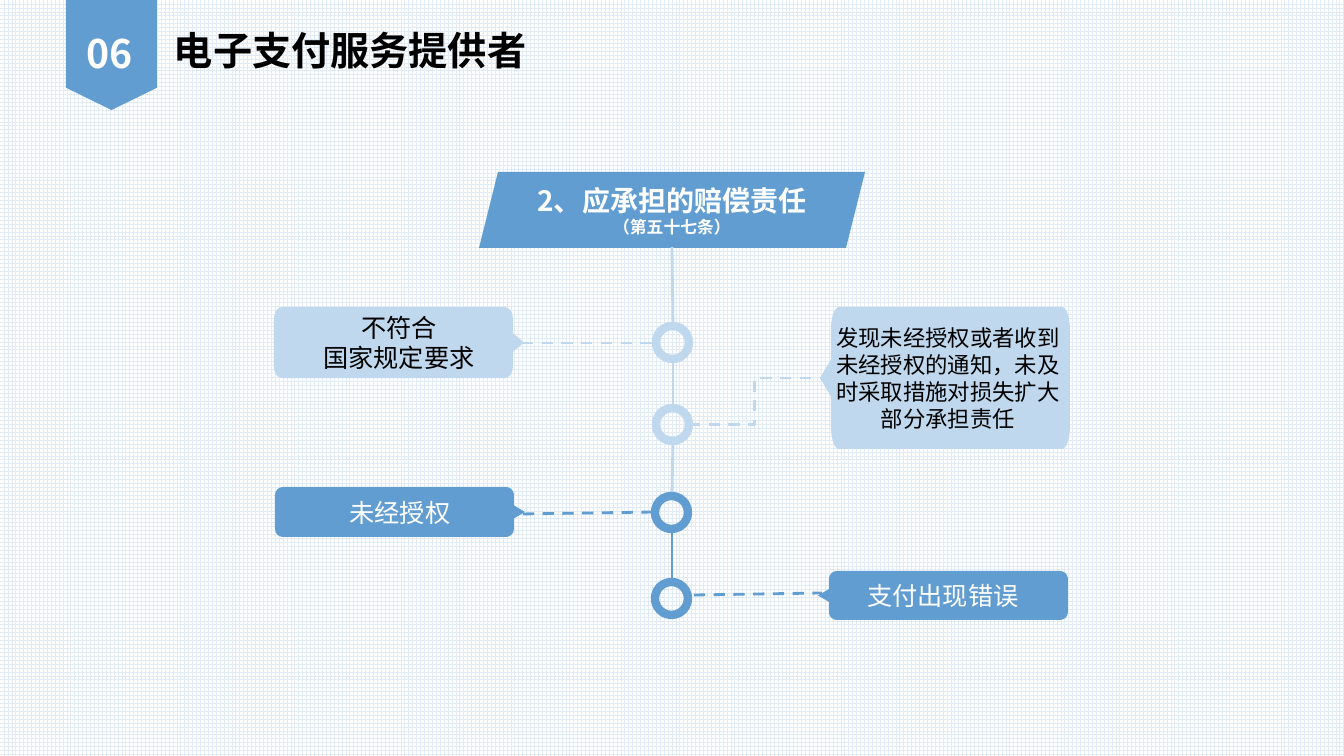
from lxml import etree
from pptx import Presentation
from pptx.dml.color import RGBColor
from pptx.enum.dml import MSO_LINE, MSO_PATTERN
from pptx.enum.shapes import MSO_CONNECTOR, MSO_SHAPE
from pptx.enum.text import MSO_ANCHOR, MSO_AUTO_SIZE, PP_ALIGN
from pptx.oxml.ns import qn
from pptx.util import Pt

EMU_PER_PX = 914400 / 100.8
BLUE = RGBColor(0x62, 0x9D, 0xD1)
PALE = RGBColor(0xC0, 0xD8, 0xED)
GRID = RGBColor(0xE0, 0xEB, 0xF6)
WHITE = RGBColor(0xFF, 0xFF, 0xFF)
BLACK = RGBColor(0x00, 0x00, 0x00)
HEAD_FONT, BODY_FONT = "Noto Sans CJK SC", "Lato"

PENTAGON, PARALLELOGRAM = MSO_SHAPE.PENTAGON, MSO_SHAPE.PARALLELOGRAM
OVAL = MSO_SHAPE.OVAL
STRAIGHT, ELBOW = MSO_CONNECTOR.STRAIGHT, MSO_CONNECTOR.ELBOW
DASH = MSO_LINE.DASH
CENTER, LEFT, MIDDLE = PP_ALIGN.CENTER, PP_ALIGN.LEFT, MSO_ANCHOR.MIDDLE

RING_SIZE = 33
ARC_PULL = 0.55


def px(value):
    return round(value * EMU_PER_PX)


def write(frame, lines, font, color, bold=False, align=CENTER):
    """Fill a text frame with one paragraph per (text, size) pair."""
    frame.word_wrap = True
    for index, (text, size) in enumerate(lines):
        para = frame.add_paragraph() if index else frame.paragraphs[0]
        para.alignment = align
        span = para.add_run()
        span.text = text
        span.font.name, span.font.size = font, Pt(size)
        span.font.bold, span.font.color.rgb = bold, color
        east_asian = etree.SubElement(span.font._element, qn("a:ea"))
        east_asian.set("typeface", HEAD_FONT)


def paint(shape, color):
    shape.shadow.inherit = False
    shape.fill.solid()
    shape.fill.fore_color.rgb = color
    shape.line.fill.background()


def add_block(page, kind, left, top, width, height):
    block = page.shapes.add_shape(kind, px(left), px(top), px(width), px(height))
    paint(block, BLUE)
    return block


def add_heading(page, left, top, width, height, text, color):
    box = page.shapes.add_textbox(px(left), px(top), px(width), px(height))
    write(box.text_frame, [(text, 28)], HEAD_FONT, color, True, LEFT)
    box.text_frame.auto_size = MSO_AUTO_SIZE.SHAPE_TO_FIT_TEXT


def add_ring(page, left, top, color):
    ring = page.shapes.add_shape(OVAL, px(left), px(top), px(RING_SIZE), px(RING_SIZE))
    ring.shadow.inherit = False
    ring.fill.background()
    ring.line.color.rgb = color
    ring.line.width = Pt(6)


def add_line(page, start, end, color, kind=STRAIGHT, dash=None):
    line = page.shapes.add_connector(kind, *map(px, start + end))
    line.line.color.rgb = color
    line.line.width = Pt(2)
    if dash:
        line.line.dash_style = dash
    etree.SubElement(line._element.spPr, qn("a:effectLst"))


def round_corner(segment, start, horizontal_first):
    """Turn a straight corner cut into a curve."""
    end = (int(segment[0].get("x")), int(segment[0].get("y")))
    corner = (end[0], start[1]) if horizontal_first else (start[0], end[1])
    segment_points = [[round(a + ARC_PULL * (c - a)) for a, c in zip(anchor, corner)]
                      for anchor in (start, end)]
    curve = etree.Element(qn("a:cubicBezTo"))
    for x, y in segment_points + [end]:
        etree.SubElement(curve, qn("a:pt"), x=str(x), y=str(y))
    segment.getparent().replace(segment, curve)


def add_callout(page, left, top, width, height, color, points_left, lines, text_color):
    """Rounded box with a small pointer halfway up one side."""
    pointer, radius_x, radius_y = 11, 8, height * 0.16
    body, middle, half = width - pointer, height / 2, height * 0.13
    outline = [(radius_x, 0), (body - radius_x, 0), (body, radius_y),
               (body, middle - half), (width, middle), (body, middle + half),
               (body, height - radius_y), (body - radius_x, height),
               (radius_x, height), (0, height - radius_y), (0, radius_y)]
    if points_left:
        outline = [(width - x, y) for x, y in outline]
    points = [(px(left + x), px(top + y)) for x, y in outline]
    builder = page.shapes.build_freeform(*points[0])
    builder.add_line_segments(points[1:] + points[:1], close=True)
    callout = builder.convert_to_shape()

    segments = list(callout._element.iter(qn("a:lnTo")))
    for index, horizontal_first in ((1, True), (6, False), (8, True), (10, False)):
        before = segments[index - 1][0]
        start = (int(before.get("x")), int(before.get("y")))
        round_corner(segments[index], start, horizontal_first)

    paint(callout, color)
    callout.text_frame.vertical_anchor = MIDDLE
    write(callout.text_frame, lines, BODY_FONT, text_color)
    return callout


def main():
    deck = Presentation()
    deck.slide_width, deck.slide_height = px(1344), px(756)
    page = deck.slides.add_slide(deck.slide_layouts[6])

    # Grid background
    backdrop = page.background.fill
    backdrop.patterned()
    backdrop.pattern = MSO_PATTERN.LARGE_GRID
    backdrop.fore_color.rgb, backdrop.back_color.rgb = GRID, WHITE

    # Section number and title
    pennant = add_block(page, PENTAGON, 56, 9, 111, 91)
    pennant.rotation = 90
    pennant.adjustments[0] = 0.245
    add_heading(page, 164, 21, 459, 57, "电子支付服务提供者", BLACK)
    add_heading(page, 77, 24, 91, 57, "06", WHITE)

    # Topic banner
    banner = add_block(page, PARALLELOGRAM, 479, 172, 386, 76)
    banner.text_frame.vertical_anchor = MIDDLE
    write(banner.text_frame, [("2、应承担的赔偿责任", 20), ("（第五十七条）", 12)],
          HEAD_FONT, WHITE, True)

    # Trunk
    rings = [(656, 326, PALE), (656, 408, PALE), (655, 496, BLUE), (655, 582, BLUE)]
    trunk = (672, 247)
    for left, top, color in rings:
        trunk_color = BLUE if top == rings[-1][1] else PALE
        center = left + RING_SIZE // 2 + 1
        add_line(page, trunk, (center, top), trunk_color)
        add_ring(page, left, top, color)
        trunk = (center, top + RING_SIZE)

    # Branches
    add_line(page, (522, 343), (656, 343), PALE, dash=DASH)
    add_line(page, (689, 425), (820, 378), PALE, ELBOW, DASH)
    add_line(page, (523, 514), (655, 512), BLUE, dash=DASH)
    add_line(page, (694, 595), (822, 593), BLUE, dash=DASH)

    # Callouts
    add_callout(page, 274, 307, 250, 71, PALE, False,
                [("不符合", 18), ("国家规定要求", 18)], BLACK)
    notice = add_callout(
        page, 820, 307, 250, 142, PALE, True,
        [("发现未经授权或者收到未经授权的通知，未及时采取措施对损失扩大部分承担责任", 16)], BLACK)
    notice.text_frame.margin_left = px(16)
    add_callout(page, 275, 487, 250, 50, BLUE, False, [("未经授权", 18)], WHITE)
    add_callout(page, 818, 571, 250, 49, BLUE, True, [("支付出现错误", 18)], WHITE)

    deck.save("out.pptx")


if __name__ == "__main__":
    main()
